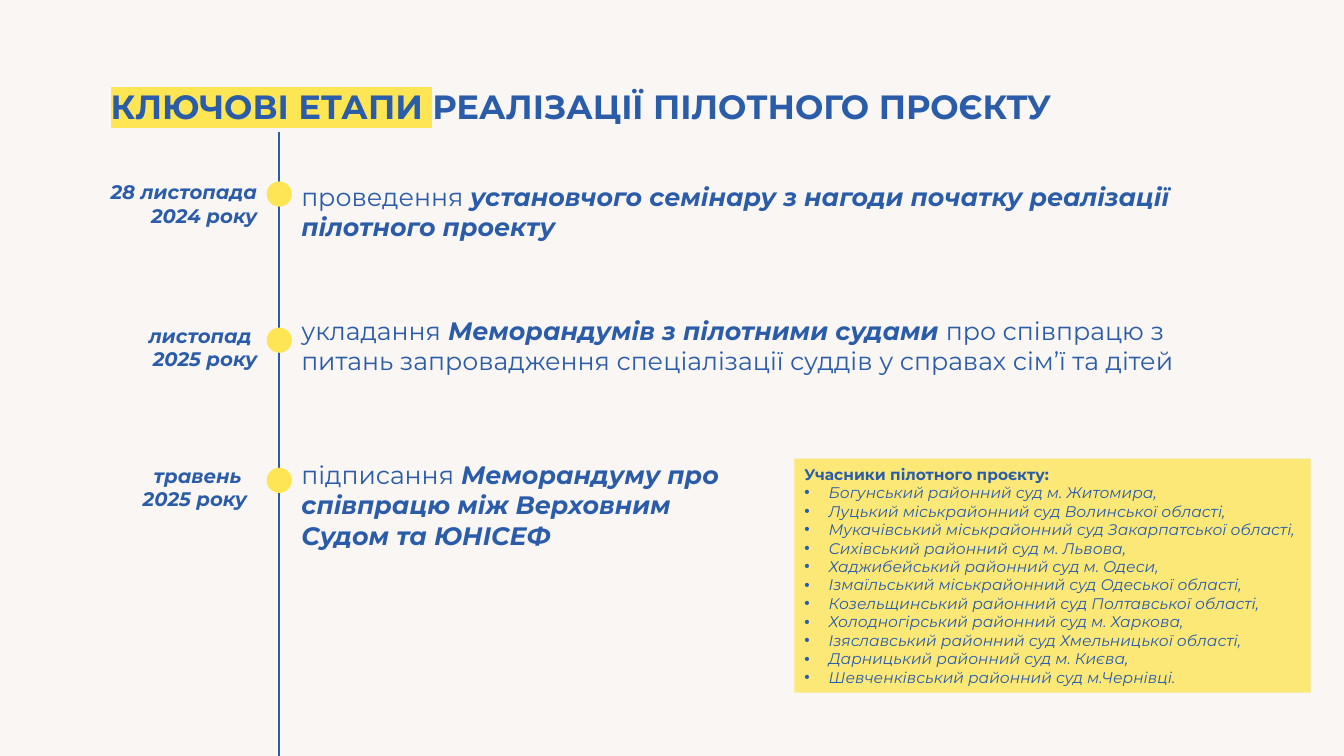
from pptx import Presentation
from pptx.dml.color import RGBColor
from pptx.enum.shapes import MSO_CONNECTOR, MSO_SHAPE
from pptx.enum.text import MSO_ANCHOR, MSO_AUTO_SIZE, PP_ALIGN
from pptx.oxml.ns import qn
from pptx.util import Inches, Pt
from lxml import etree

RIGHT, JUSTIFY = PP_ALIGN.RIGHT, PP_ALIGN.JUSTIFY
FIT = MSO_AUTO_SIZE.SHAPE_TO_FIT_TEXT
TOP, MIDDLE = MSO_ANCHOR.TOP, MSO_ANCHOR.MIDDLE
ROUNDED, OVAL = MSO_SHAPE.ROUNDED_RECTANGLE, MSO_SHAPE.OVAL
STRAIGHT = MSO_CONNECTOR.STRAIGHT

EMPHASIS = {"bold": True, "italic": True}
AXIS_X = 2.77
DOT = 0.25

COURTS = [
    "Богунський районний суд м. Житомира,",
    "Луцький міськрайонний суд Волинської області,",
    "Мукачівський міськрайонний суд Закарпатської області,",
    "Сихівський районний суд м. Львова,",
    "Хаджибейський районний суд м. Одеси,",
    "Ізмаїльський міськрайонний суд Одеської області,",
    "Козельщинський районний суд Полтавської області,",
    "Холодногірський районний суд м. Харкова,",
    "Ізяславський районний суд Хмельницької області,",
    "Дарницький районний суд м. Києва,",
    "Шевченківський районний суд м.Чернівці.",
]

# dot top, date box, date lines, text box, text runs
STAGES = [
    (1.8, (0.88, 1.74, 1.77, 0.57), ["28 листопада 2024 року"],
     (2.89, 1.75, 9.17, 0.71),
     [("проведення ", {}),
      ("установчого семінару з нагоди початку реалізації пілотного проекту", EMPHASIS)]),
    (3.25, (0.88, 3.16, 1.77, 0.57), ["листопад ", "2025 року"],
     (2.89, 3.08, 9.04, 0.71),
     [("укладання", {}),
      (" Меморандумів з пілотними судами ", EMPHASIS),
      ("про співпрацю з питань запровадження спеціалізації суддів "
       "у справах сім’ї та дітей", {})]),
    (4.64, (0.96, 4.55, 1.59, 0.57), ["травень ", "2025 року"],
     (2.89, 4.51, 4.58, 1.01),
     [("підписання", {}),
      (" Меморандуму про співпрацю між Верховним Судом та ЮНІСЕФ", EMPHASIS)]),
]


def rgb(color):
    return RGBColor.from_string(color)


class Deck:
    font, blue, yellow, background = "Montserrat", "2A5CAA", "FEE554", "F9F6F3"

    def __init__(self):
        self.prs = Presentation()
        self.prs.slide_width, self.prs.slide_height = Inches(13.33), Inches(7.5)
        self.s = self.prs.slides.add_slide(self.prs.slide_layouts[6])
        fill = self.s.background.fill
        fill.solid()
        fill.fore_color.rgb = rgb(self.background)

    def run(self, p, text, size=18, bold=False, italic=False, highlight=None):
        r = p.add_run()
        r.text = text
        f = r.font
        f.size, f.bold, f.italic, f.name = Pt(size), bold, italic, self.font
        f.color.rgb = rgb(self.blue)
        if highlight:
            mark = etree.Element(qn("a:highlight"))
            etree.SubElement(mark, qn("a:srgbClr"), val=highlight)
            r._r.get_or_add_rPr().find(qn("a:solidFill")).addnext(mark)

    def fill_text(self, sp, paragraphs, align=None, anchor=TOP, **fmt):
        """Fill a shape with paragraphs, each a list of (text, format) runs."""
        tf = sp.text_frame
        tf.word_wrap, tf.auto_size, tf.vertical_anchor = True, FIT, anchor
        for i, runs in enumerate(paragraphs):
            p = tf.add_paragraph() if i else tf.paragraphs[0]
            p.alignment = align
            for text, own in runs:
                self.run(p, text, **{**fmt, **own})
        return tf

    def text(self, box, paragraphs, **fmt):
        sp = self.s.shapes.add_textbox(*map(Inches, box))
        return self.fill_text(sp, paragraphs, **fmt)

    def shape(self, kind, box, alpha=100):
        sp = self.s.shapes.add_shape(kind, *map(Inches, box))
        sp.shadow.inherit = False
        sp.fill.solid()
        sp.fill.fore_color.rgb = rgb(self.yellow)
        sp.line.fill.background()
        if alpha < 100:
            color = sp._element.spPr.find(qn("a:solidFill"))[0]
            etree.SubElement(color, qn("a:alpha"), val=str(alpha * 1000))
        return sp

    def line(self, x1, y1, x2, y2, width=1.5):
        c = self.s.shapes.add_connector(STRAIGHT, *map(Inches, (x1, y1, x2, y2)))
        c.line.color.rgb = rgb(self.blue)
        c.line.width = Pt(width)
        etree.SubElement(c._element.spPr, qn("a:effectLst"))

    def bullet(self, p, indent=0.24):
        pPr = p._p.get_or_add_pPr()
        pPr.set("marL", str(Inches(indent)))
        pPr.set("indent", str(-Inches(indent)))
        etree.SubElement(pPr, qn("a:buFont"), typeface="Arial")
        etree.SubElement(pPr, qn("a:buChar"), char="•")


def main():
    d = Deck()
    d.text((1, 0.8, 10.17, 0.5),
           [[("КЛЮЧОВІ ЕТАПИ ", {"highlight": d.yellow}),
             ("РЕАЛІЗАЦІЇ ПІЛОТНОГО ПРОЄКТУ", {})]], size=24, bold=True)

    d.line(AXIS_X, 1.31, AXIS_X, 7.5)
    for dot_top, date_box, date, box, runs in STAGES:
        d.text(box, [runs])
        d.text(date_box, [[(line, EMPHASIS)] for line in date], align=RIGHT, size=14)
        d.shape(OVAL, (AXIS_X - DOT / 2, dot_top, DOT, DOT))

    panel = d.shape(ROUNDED, (7.88, 4.55, 5.12, 2.32), alpha=78)
    panel.adjustments[0] = 0
    heading = [("Учасники пілотного проєкту:", {"bold": True})]
    courts = [[(court, {"italic": True})] for court in COURTS]
    tf = d.fill_text(panel, [heading] + courts, align=JUSTIFY, anchor=MIDDLE, size=11)
    tf.paragraphs[0].space_before = Pt(12)
    for p in tf.paragraphs[1:]:
        d.bullet(p)

    d.prs.save("out.pptx")


if __name__ == "__main__":
    main()
